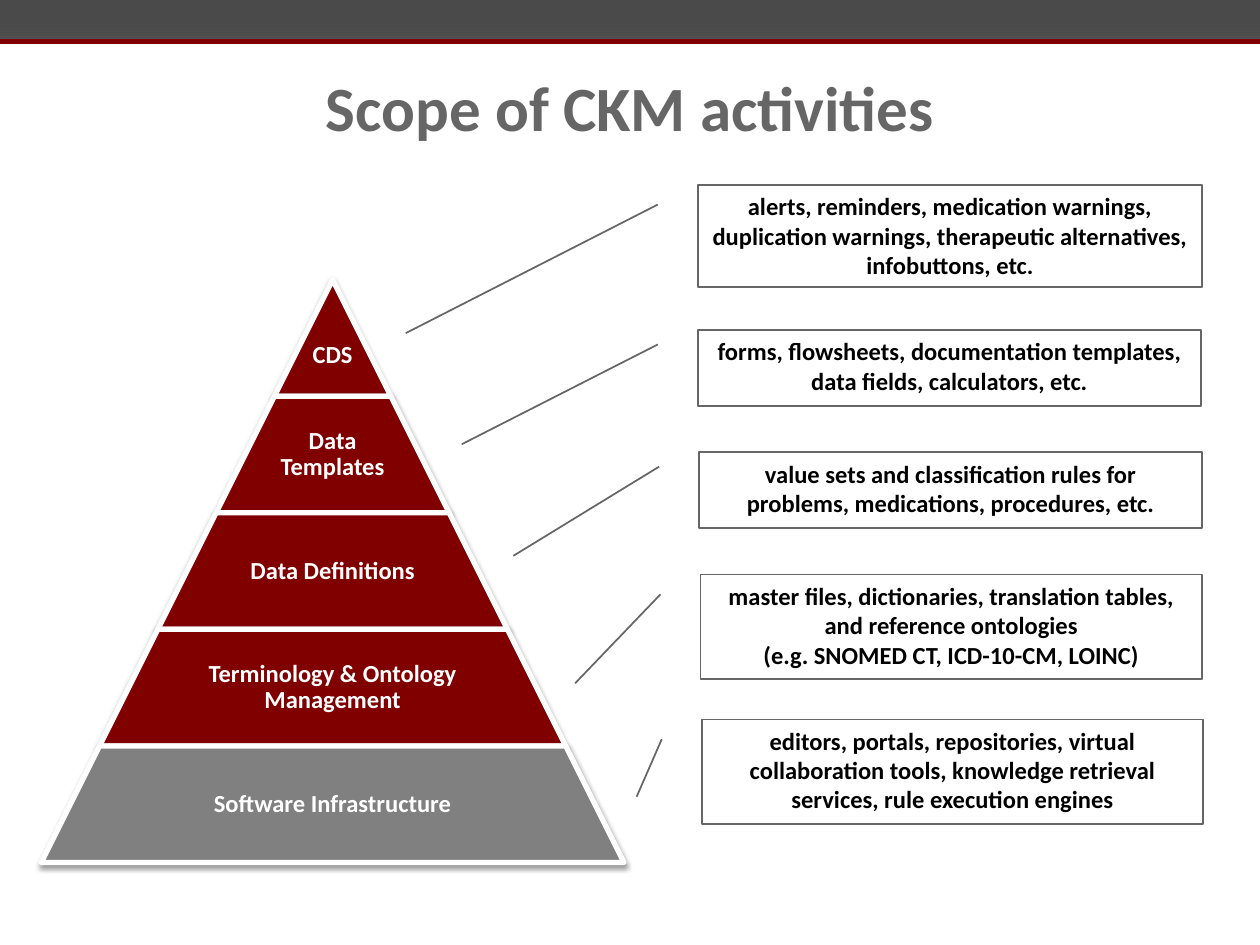
import pptx
import pptx.dml.color
import pptx.enum.shapes
import pptx.enum.text
import pptx.oxml
import pptx.oxml.ns
import pptx.util

Inches = pptx.util.Inches
Pt = pptx.util.Pt
RGBColor = pptx.dml.color.RGBColor
MSO_SHAPE = pptx.enum.shapes.MSO_SHAPE
MSO_ANCHOR = pptx.enum.text.MSO_ANCHOR

WHITE = RGBColor(0xFF, 0xFF, 0xFF)
BLACK = RGBColor(0x00, 0x00, 0x00)
MAROON = RGBColor(0x80, 0x00, 0x00)
GRAY = RGBColor(0x80, 0x80, 0x80)
SLATE = RGBColor(0x66, 0x66, 0x66)

NS = pptx.oxml.ns.nsdecls("a")
SHADOW = (f'<a:outerShdw {NS} blurRad="{Pt(3.1)}" dist="{Pt(1.6)}" dir="5400000" rotWithShape="0">'
          '<a:srgbClr val="000000"><a:alpha val="38000"/></a:srgbClr></a:outerShdw>')
HEADER_STOPS = (f'<a:gsLst {NS}><a:gs pos="50000"><a:srgbClr val="4B4B4B"/></a:gs>'
                '<a:gs pos="99000"><a:srgbClr val="353535"><a:alpha val="85000"/></a:srgbClr></a:gs>'
                '<a:gs pos="100000"><a:srgbClr val="A6A6A6"/></a:gs></a:gsLst>')

APEX_X, APEX_Y, STEP = 2.64, 2.22, 0.925

TIERS = [
    ("CDS", MAROON),
    ("Data Templates", MAROON),
    ("Data Definitions", MAROON),
    ("Terminology & Ontology Management", MAROON),
    ("Software Infrastructure", GRAY),
]

CALLOUTS = [
    (5.54, 1.47, 4.0, 0.81, 1.45, -0.58,
     "alerts, reminders, medication warnings, duplication warnings, "
     "therapeutic alternatives, infobuttons, etc."),
    (5.54, 2.62, 3.99, 0.6, 1.51, -0.47,
     "forms, flowsheets, documentation templates, data fields, calculators, etc."),
    (5.55, 3.59, 3.99, 0.6, 1.37, -0.37,
     "value sets and classification rules for problems, medications, procedures, etc."),
    (5.56, 4.56, 3.98, 0.83, 1.04, -0.25,
     "master files, dictionaries, translation tables, and reference ontologies\n"
     "(e.g. SNOMED CT, ICD-10-CM, LOINC)"),
    (5.57, 5.71, 3.98, 0.83, 0.74, -0.13,
     "editors, portals, repositories, virtual collaboration tools, "
     "knowledge retrieval services, rule execution engines"),
]


class Deck:
    """Holds the text style and the current slide, and draws each kind of element."""

    font = "Calibri"

    def __init__(self, slide):
        self.shapes = slide.shapes

    def set_text(self, sp, text, size, color, anchor):
        tf = sp.text_frame
        tf.word_wrap = True
        tf.vertical_anchor = anchor
        p = tf.paragraphs[0]
        p.text = text
        p.alignment = pptx.enum.text.PP_ALIGN.CENTER
        p.font.name = self.font
        p.font.size = Pt(size)
        p.font.bold = True
        p.font.color.rgb = color
        return tf

    def shape(self, kind, left, top, width, height):
        sp = self.shapes.add_shape(kind, Inches(left), Inches(top), Inches(width), Inches(height))
        sp.shadow.inherit = False
        return sp

    def text(self, text, left, top, width, height, size, color):
        sp = self.shapes.add_textbox(Inches(left), Inches(top), Inches(width), Inches(height))
        return self.set_text(sp, text, size, color, MSO_ANCHOR.MIDDLE)

    def header(self, height):
        sp = self.shape(MSO_SHAPE.RECTANGLE, 0, 0, 10, height)
        sp.line.fill.background()
        sp.fill.gradient()
        sp.fill.gradient_angle = 270
        stops = sp.element.spPr.find(".//" + pptx.oxml.ns.qn("a:gsLst"))
        stops.getparent().replace(stops, pptx.oxml.parse_xml(HEADER_STOPS))
        rule = self.shapes.add_connector(
            pptx.enum.shapes.MSO_CONNECTOR.STRAIGHT, 0, Inches(height), Inches(10), Inches(height))
        rule.line.color.rgb = MAROON
        rule.line.width = Pt(3)
        rule.element.spPr.append(pptx.oxml.parse_xml(f"<a:effectLst {NS}/>"))

    def tier(self, index, label, color):
        width = STEP * (index + 1)
        top = APEX_Y + STEP * index
        sp = self.shape(MSO_SHAPE.TRAPEZOID, APEX_X - width / 2, top, width, STEP)
        sp.adjustments[0] = 0.5
        sp.fill.solid()
        sp.fill.fore_color.rgb = color
        sp.line.color.rgb = WHITE
        sp.line.width = Pt(3)
        effects = sp.element.spPr.find(pptx.oxml.ns.qn("a:effectLst"))
        effects.append(pptx.oxml.parse_xml(SHADOW))

        text_width = width * 0.65 if index else width
        tf = self.text(label, APEX_X - text_width / 2, top, text_width, STEP, 14, WHITE)
        tf.margin_left = tf.margin_right = tf.margin_bottom = Inches(0.02)
        tf.margin_top = Inches(0.02 if index else 0.3)
        tf.paragraphs[0].line_spacing = 0.9

    def callout(self, left, top, width, height, tip_y, tip_x, text):
        sp = self.shape(MSO_SHAPE.LINE_CALLOUT_1, left, top, width, height)
        for i, value in enumerate((0.19, -0.08, tip_y, tip_x)):
            sp.adjustments[i] = value
        sp.fill.background()
        sp.line.color.rgb = SLATE
        sp.line.width = Pt(1)
        self.set_text(sp, text, 14, BLACK, MSO_ANCHOR.TOP)


def main():
    prs = pptx.Presentation()
    prs.slide_width = Inches(10)
    prs.slide_height = Inches(7.5)
    deck = Deck(prs.slides.add_slide(prs.slide_layouts[6]))
    deck.header(0.33)
    deck.text("Scope of CKM activities", 0.5, 0.4, 9, 0.88, 36, SLATE)
    for index, (label, color) in enumerate(TIERS):
        deck.tier(index, label, color)
    for callout in CALLOUTS:
        deck.callout(*callout)
    prs.save("out.pptx")


if __name__ == "__main__":
    main()
